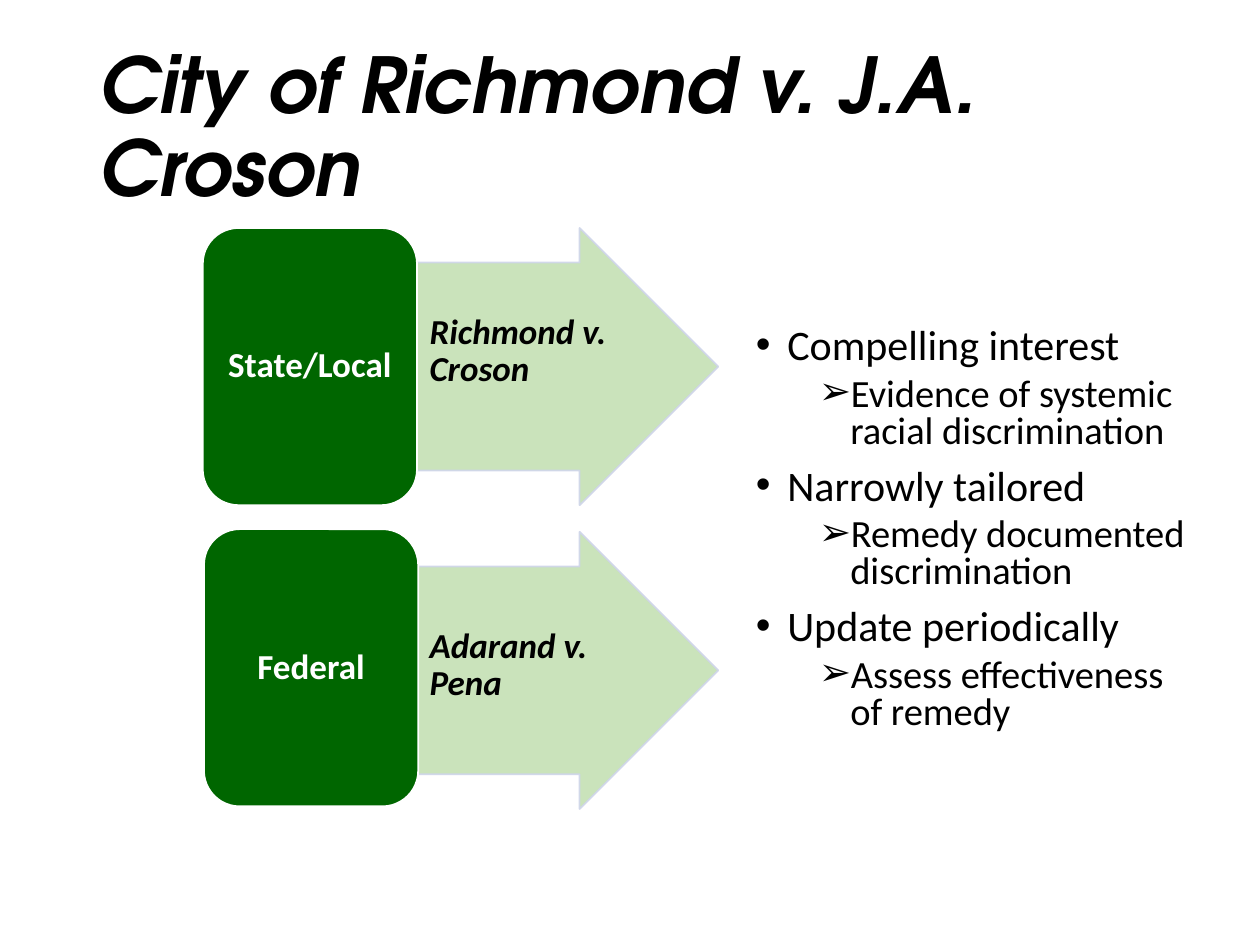
"""Build a slide on strict scrutiny of state, local and federal affirmative action."""
from lxml import etree
from pptx import Presentation
from pptx.dml.color import RGBColor
from pptx.enum.shapes import MSO_SHAPE
from pptx.enum.text import MSO_ANCHOR, PP_ALIGN
from pptx.oxml.ns import qn
from pptx.util import Pt

ARROW = MSO_SHAPE.RIGHT_ARROW
CARD = MSO_SHAPE.ROUNDED_RECTANGLE
MIDDLE = MSO_ANCHOR.MIDDLE
CENTER = PP_ALIGN.CENTER
COLORS = {"black": "000000", "white": "FFFFFF", "card": "006600",
          "arrow": "C5E0B4", "edge": "CFD5EA"}
CASES = [
    ("State/Local", "Richmond v. Croson", 115.9, 130.3, 130.3, 179.3),
    ("Federal", "Adarand v. Pena", 116.6, 302.4, 303.9, 358.8),
]
TESTS = [
    ("Compelling interest", "Evidence of systemic racial discrimination"),
    ("Narrowly tailored", "Remedy documented discrimination"),
    ("Update periodically", "Assess effectiveness of remedy"),
]


def rgb(name):
    """Look up a named colour."""
    return RGBColor.from_string(COLORS[name])


def style(para, size, color="black", font="Calibri", bold=False, italic=False, spacing=0.9):
    """Set the line spacing of a paragraph and the font of its runs."""
    para.line_spacing = spacing
    for span in para.runs:
        span.font.name = font
        span.font.size = Pt(size)
        span.font.bold = bold
        span.font.italic = italic
        span.font.color.rgb = rgb(color)


def add_text(page, left, top, width, height, text="", inset=None):
    """Add a wrapping text box, with an equal inset when one is given."""
    box = page.shapes.add_textbox(Pt(left), Pt(top), Pt(width), Pt(height))
    frame = box.text_frame
    frame.word_wrap = True
    if inset is not None:
        frame.margin_left = frame.margin_right = Pt(inset)
        frame.margin_top = frame.margin_bottom = Pt(inset)
    frame.text = text
    return frame


def add_block(page, kind, left, top, width, height, fill, line):
    """Add a filled and outlined preset shape."""
    block = page.shapes.add_shape(kind, Pt(left), Pt(top), Pt(width), Pt(height))
    block.shadow.inherit = False
    block.fill.solid()
    block.fill.fore_color.rgb = rgb(fill)
    block.line.color.rgb = rgb(line)
    block.line.width = Pt(1)
    return block


def set_opacity(block, percent):
    """Make the fill and line of a shape slightly transparent."""
    for color in block._element.spPr.iter(qn("a:srgbClr")):
        etree.SubElement(color, qn("a:alpha"), val=str(percent * 1000))


def add_case(page, level, case, card_left, card_top, arrow_top, label_top):
    """Add an arrow naming a case, led by a card for the level of government."""
    arrow = add_block(page, ARROW, 226.8, arrow_top, 183.6, 158.4, "arrow", "edge")
    arrow.adjustments[0] = 0.75
    set_opacity(arrow, 90)
    label = add_text(page, 245.5, label_top, 105, 46, case, inset=0)
    style(label.paragraphs[0], 20, bold=True, italic=True)
    card = add_block(page, CARD, card_left, card_top, 122.4, 158.4, "card", "white")
    frame = card.text_frame
    frame.text = level
    frame.vertical_anchor = MIDDLE
    frame.paragraphs[0].alignment = CENTER
    style(frame.paragraphs[0], 20, "white", bold=True)


def add_bullet(para, char, margin):
    """Give a paragraph a hanging bullet."""
    props = para._p.get_or_add_pPr()
    props.set("marL", str(Pt(margin)))
    props.set("indent", str(Pt(-18)))
    etree.SubElement(props, qn("a:buFont"), typeface="Arial")
    etree.SubElement(props, qn("a:buChar"), char=char)


def add_tests(page):
    """Add the bulleted list of legal tests."""
    frame = add_text(page, 424.8, 184.3, 265, 243.4)
    for index, (test, detail) in enumerate(TESTS):
        para = frame.add_paragraph() if index else frame.paragraphs[0]
        para.text = test
        add_bullet(para, "•", 18)
        if index:
            para.space_before = Pt(10)
        style(para, 24, spacing=0.8)
        para = frame.add_paragraph()
        para.text = detail
        para.level = 1
        add_bullet(para, "➢", 54)
        para.space_before = Pt(5)
        style(para, 22, spacing=0.8)


def main():
    """Build and save the deck."""
    deck = Presentation()
    deck.slide_width, deck.slide_height = Pt(720), Pt(540)
    page = deck.slides.add_slide(deck.slide_layouts[6])
    title = add_text(page, 49.7, 38.2, 670.3, 72, "City of Richmond v. J.A. Croson")
    title.vertical_anchor = MIDDLE
    style(title.paragraphs[0], 44, font="TeX Gyre Adventor", bold=True, italic=True)
    add_tests(page)
    for case in CASES:
        add_case(page, *case)
    deck.save("out.pptx")


if __name__ == "__main__":
    main()
